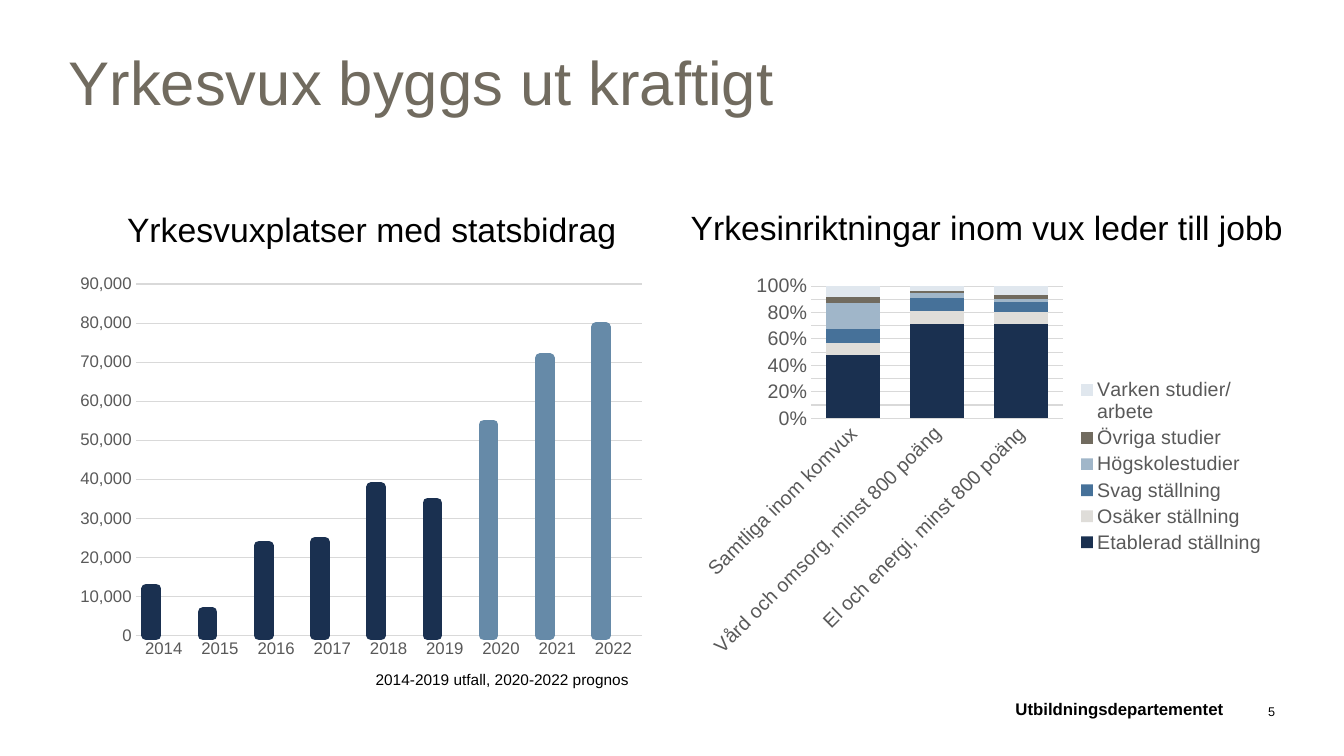
from dataclasses import dataclass, field
from typing import Any

from lxml import etree
from pptx import Presentation
from pptx import util as u
from pptx.chart import data as chart_data
from pptx.dml import color
from pptx.enum import chart as charts
from pptx.enum import text
from pptx.oxml import ns

FONT = "Arial"
BLACK, BROWN, GREY, RULE = "000000", "716B5F", "595959", "D9D9D9"
NAVY, SAND, BLUE, FORECAST = "1A3050", "DFDDD9", "467199", "668AA8"
MIST, PALE = "A0B6C9", "E0E7EE"
COLUMN_OUTLINE = 7


@dataclass
class Label:
    words: str
    left: float
    top: float
    width: float
    height: float
    style: dict[str, Any] = field(default_factory=dict)


@dataclass
class Series:
    name: str
    values: list[float | None]
    fill: str


@dataclass
class ColumnChart:
    kind: charts.XL_CHART_TYPE
    left: float
    width: float
    categories: list[str]
    series: list[Series]
    size: float
    gap: int
    overlap: int
    number_format: str
    unit: float
    maximum: float


def rgb(value: str) -> color.RGBColor:
    return color.RGBColor.from_string(value)


def format_font(font: Any, size: float, fill: str = BLACK, bold: bool = False) -> None:
    font.name = FONT
    font.size = u.Pt(size)
    font.bold = bold
    font.color.rgb = rgb(fill)


def format_line(line: Any, fill: str, width: float) -> None:
    line.color.rgb = rgb(fill)
    line.width = u.Pt(width)


def write(box: Any, words: str, *, size: float, fill: str = BLACK, bold: bool = False,
          align: text.PP_ALIGN = text.PP_ALIGN.LEFT,
          anchor: text.MSO_ANCHOR = text.MSO_ANCHOR.TOP,
          wrap: bool = True, side: float = 0, edge: float = 3.6) -> None:
    frame = box.text_frame
    frame.word_wrap = wrap
    frame.vertical_anchor = anchor
    frame.margin_left = frame.margin_right = u.Pt(side)
    frame.margin_top = frame.margin_bottom = u.Pt(edge)
    para = frame.paragraphs[0]
    para.alignment = align
    span = para.add_run()
    span.text = words
    format_font(span.font, size, fill, bold)


def add_label(page: Any, label: Label) -> None:
    box = page.shapes.add_textbox(u.Pt(label.left), u.Pt(label.top),
                                  u.Pt(label.width), u.Pt(label.height))
    write(box, label.words, **label.style)


def add_columns(page: Any, model: ColumnChart) -> Any:
    table = chart_data.CategoryChartData()
    table.categories = model.categories
    for series in model.series:
        table.add_series(series.name, series.values)
    chart = page.shapes.add_chart(model.kind, u.Pt(model.left), u.Pt(190.8),
                                  u.Pt(model.width), u.Pt(284.4), table).chart
    chart.has_title = False
    chart.has_legend = False
    format_font(chart.font, 10)
    for axis in (chart.category_axis, chart.value_axis):
        axis.major_tick_mark = axis.minor_tick_mark = charts.XL_TICK_MARK.NONE
        format_font(axis.tick_labels.font, model.size, GREY)
    format_line(chart.category_axis.format.line, RULE, 0.75)
    scale = chart.value_axis
    scale.format.line.fill.background()
    scale.has_major_gridlines = True
    format_line(scale.major_gridlines.format.line, RULE, 0.75)
    scale.minimum_scale, scale.maximum_scale = 0, model.maximum
    scale.major_unit = model.unit
    scale.tick_labels.number_format = model.number_format
    scale.tick_labels.number_format_is_linked = False
    plot = chart.plots[0]
    plot.gap_width, plot.overlap = model.gap, model.overlap
    plot.vary_by_categories = False
    for drawn, series in zip(plot.series, model.series):
        paint(drawn, series.fill)
    return chart


def paint(item: Any, fill: str) -> None:
    item.format.fill.solid()
    item.format.fill.fore_color.rgb = rgb(fill)


def outline_places(chart: Any) -> None:
    places = chart.plots[0].series[0]
    format_line(places.format.line, NAVY, COLUMN_OUTLINE)
    for index in range(6, 9):
        point = places.points[index]
        paint(point, FORECAST)
        format_line(point.format.line, FORECAST, COLUMN_OUTLINE)
    for line in chart._chartSpace.iter(ns.qn("a:ln")):
        if line.get("w") == str(u.Pt(COLUMN_OUTLINE)):
            etree.SubElement(line, ns.qn("a:round"))


def add_legend(chart: Any) -> None:
    chart.has_legend = True
    chart.legend.position = charts.XL_LEGEND_POSITION.RIGHT
    chart.legend.include_in_layout = False
    format_font(chart.legend.font, 14, GREY)


CENTER, RIGHT = text.PP_ALIGN.CENTER, text.PP_ALIGN.RIGHT
FOOTER = dict(align=RIGHT, anchor=text.MSO_ANCHOR.BOTTOM, edge=0)
LABELS = [
    Label("Yrkesvux byggs ut kraftigt", 49, 28, 862, 81.4, dict(size=44, fill=BROWN)),
    Label("Yrkesvuxplatser med statsbidrag", 56.9, 131, 417.6, 64.8,
          dict(size=24.1, align=CENTER, anchor=text.MSO_ANCHOR.MIDDLE)),
    Label("Yrkesinriktningar inom vux leder till jobb", 483.8, 144, 442, 36,
          dict(size=24, align=CENTER, wrap=False, side=7.2)),
    Label("2014-2019 utfall, 2020-2022 prognos", 86.4, 475.2, 370, 20.9,
          dict(size=11, align=RIGHT, side=7.2)),
    Label("Utbildningsdepartementet", 602, 496, 272, 17.3, dict(size=12, bold=True, **FOOTER)),
    Label("5", 872.6, 496, 38.2, 17.3, dict(size=9, **FOOTER)),
]

YEARS = [str(year) for year in range(2014, 2023)]
PLACES = ColumnChart(
    charts.XL_CHART_TYPE.COLUMN_CLUSTERED, 49, 417.6, YEARS,
    [Series("Series 1", [12000, 6000, 23000, 24000, 38000, 34000, 54000, 71000, 79000], NAVY),
     Series("Series 2", [None] * len(YEARS), SAND),
     Series("Series 3", [None] * len(YEARS), BLUE)],
    12, 219, -27, "#,##0", 10000, 90000)
OUTCOMES = ColumnChart(
    charts.XL_CHART_TYPE.COLUMN_STACKED_100, 490.3, 421.2,
    ["Samtliga inom komvux", "Vård och omsorg, minst 800 poäng",
     "El och energi, minst 800 poäng"],
    [Series("Etablerad ställning", [47, 71, 71], NAVY),
     Series("Osäker ställning", [9, 10, 9], SAND),
     Series("Svag ställning", [11, 10, 8], BLUE),
     Series("Högskolestudier", [19, 4, 2], MIST),
     Series("Övriga studier", [5, 1, 3], BROWN),
     Series("Varken studier/ arbete", [8, 4, 7], PALE)],
    14, 55, 100, "0%", 0.1, 1)


def main() -> None:
    deck = Presentation()
    deck.slide_width, deck.slide_height = u.Pt(960), u.Pt(540)
    page = deck.slides.add_slide(deck.slide_layouts[6])
    outline_places(add_columns(page, PLACES))
    add_legend(add_columns(page, OUTCOMES))
    for label in LABELS:
        add_label(page, label)
    deck.save("out.pptx")


if __name__ == "__main__":
    main()
